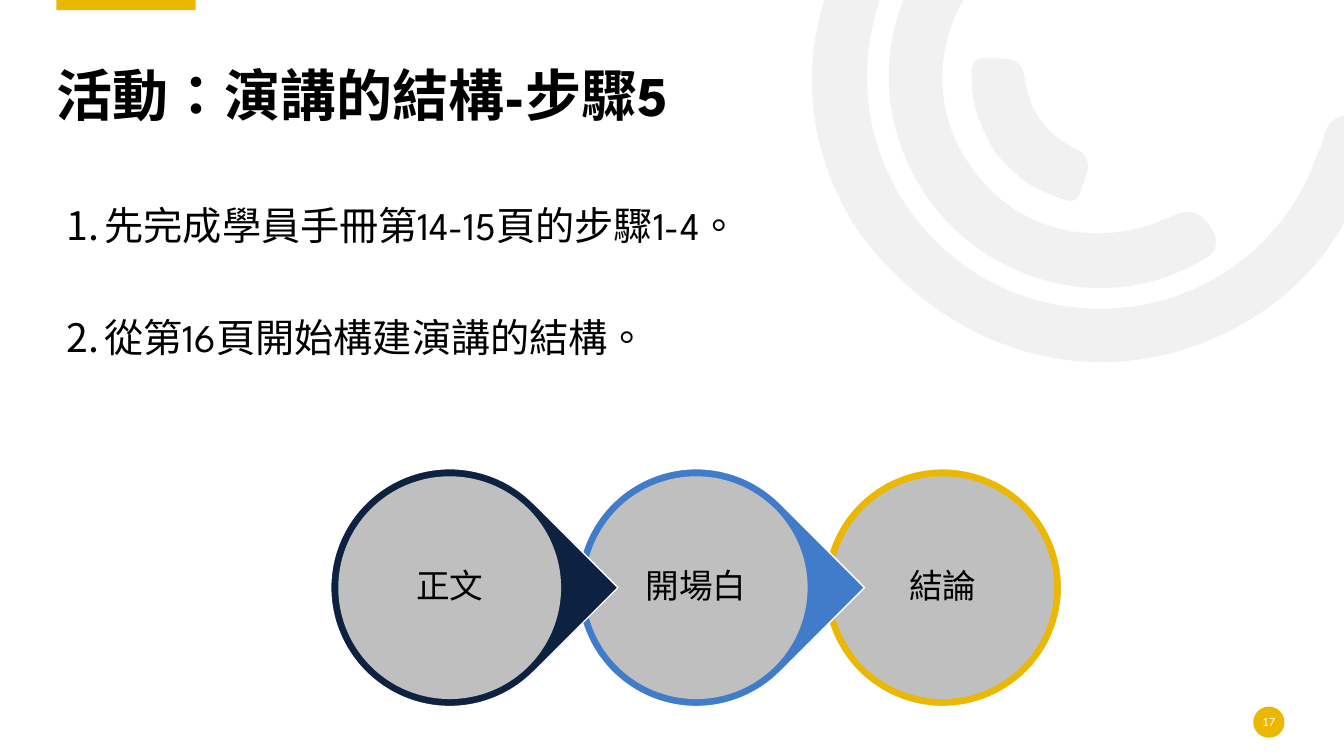
from pptx import Presentation
from pptx.dml.color import RGBColor
from pptx.enum.lang import MSO_LANGUAGE_ID
from pptx.enum.shapes import MSO_SHAPE
from pptx.enum.text import MSO_ANCHOR, PP_ALIGN
from pptx.oxml.ns import qn
from pptx.util import Inches, Pt
from lxml.etree import SubElement

GOLD, BLUE, NAVY = "EBB700", "407CCA", "0D2240"
GRAY, PALE, WHITE, BLACK = "BFBFBF", "F1F1F1", "FFFFFF", "000000"
HEAD_FONT, BODY_FONT = "League Spartan", "Calibri"

# Each arc is a start point followed by cubic curves (two handles and an end).
ARCS = [
    [(8.51, 2.29),
     (7.99, 1.49), (7.87, 0.5), (8.38, -0.5),
     (8.9, -1.52), (9.76, -2.03), (10.9, -2.07),
     (11.05, -2.07), (11.21, -2.1), (11.31, -1.95),
     (11.44, -1.75), (11.27, -1.54), (10.98, -1.54),
     (9.67, -1.54), (8.65, -0.59), (8.6, 0.68),
     (8.56, 1.81), (9.36, 2.81), (10.46, 3.02),
     (11.6, 3.24), (12.7, 2.61), (13.07, 1.52),
     (13.09, 1.48), (13.11, 1.44), (13.12, 1.4),
     (13.16, 1.19), (13.27, 1.11), (13.49, 1.17),
     (13.73, 1.24), (13.67, 1.41), (13.61, 1.56),
     (13.34, 2.45), (12.78, 3.07), (11.91, 3.41),
     (10.7, 3.87), (9.36, 3.45), (8.51, 2.29)],
    [(9.22, 1.99),
     (8.62, 1.15), (8.69, 0.07), (9.4, -0.68),
     (9.51, -0.79), (9.62, -0.95), (9.8, -0.78),
     (9.95, -0.64), (9.97, -0.5), (9.79, -0.32),
     (9.25, 0.26), (9.2, 1.08), (9.65, 1.68),
     (10.08, 2.29), (10.88, 2.49), (11.61, 2.15),
     (11.82, 2.05), (11.93, 2.12), (12.03, 2.29),
     (12.13, 2.5), (11.97, 2.56), (11.83, 2.63),
     (10.96, 3.1), (9.83, 2.82), (9.22, 1.99)],
    [(9.87, 1.51),
     (9.75, 1.3), (9.64, 1.07), (9.64, 0.82),
     (9.64, 0.73), (9.61, 0.57), (9.76, 0.58),
     (9.92, 0.59), (10.13, 0.53), (10.16, 0.76),
     (10.21, 1.1), (10.36, 1.32), (10.67, 1.48),
     (10.88, 1.57), (10.76, 1.76), (10.72, 1.89),
     (10.68, 2.06), (10.55, 1.98), (10.45, 1.94),
     (10.21, 1.87), (10.03, 1.7), (9.87, 1.51)],
]


def color(code):
    return RGBColor.from_string(code)


def paint(shape, fill, line=None):
    shape.shadow.inherit = False
    shape.fill.solid()
    shape.fill.fore_color.rgb = color(fill)
    if line:
        shape.line.color.rgb = color(line)
        shape.line.width = Pt(1)
    else:
        shape.line.fill.background()


def add_shape(slide, kind, box, fill, line=None):
    shape = slide.shapes.add_shape(kind, *map(Inches, box))
    paint(shape, fill, line)
    return shape


def add_box(slide, box):
    return slide.shapes.add_textbox(*map(Inches, box))


def number(para):
    props = para._p.get_or_add_pPr()
    props.set("marL", str(Inches(0.38)))
    props.set("indent", str(-Inches(0.38)))
    SubElement(props, qn("a:buFont"), typeface="+mj-lt")
    SubElement(props, qn("a:buAutoNum"), type="arabicPeriod")


def write(shape, *lines, font=BODY_FONT, size=24, ink=BLACK, bold=False,
          align=PP_ALIGN.LEFT, anchor=MSO_ANCHOR.MIDDLE, inset=(0, 0),
          numbered=False, gap=0):
    """Fill a shape with one paragraph per line, gap points apart."""
    frame = shape.text_frame
    frame.word_wrap = True
    frame.vertical_anchor = anchor
    frame.margin_left = frame.margin_right = Inches(inset[0])
    frame.margin_top = frame.margin_bottom = Inches(inset[1])
    for i, line in enumerate(lines):
        para = frame.add_paragraph() if i else frame.paragraphs[0]
        para.alignment = align
        para.line_spacing = 0.9
        if i:
            para.space_before = Pt(gap)
        if numbered:
            number(para)
        run = para.add_run()
        run.text = line
        for style in (para.font, run.font):
            style.name, style.size, style.bold = font, Pt(size), bold
            style.color.rgb = color(ink)
        run.font.language_id = MSO_LANGUAGE_ID.TRADITIONAL_CHINESE


def bend(shape):
    """Turn each three straight segments of an outline into one cubic curve."""
    lines = list(shape._element.iter(qn("a:lnTo")))
    for i in range(0, len(lines), 3):
        first, *rest = lines[i:i + 3]
        curve = first.makeelement(qn("a:cubicBezTo"))
        first.addprevious(curve)
        for line in (first, *rest):
            curve.append(line[0])
            line.getparent().remove(line)


def add_arc(slide, nodes):
    start, *rest = [(Inches(x), Inches(y)) for x, y in nodes]
    pen = slide.shapes.build_freeform(*start)
    pen.add_line_segments(rest, close=True)
    arc = pen.convert_to_shape()
    bend(arc)
    paint(arc, PALE)


def add_stage(slide, left, label, rim, kind):
    top, size, edge = 4.65, 2.36, 0.075
    back = add_shape(slide, kind, (left, top, size, size), rim, WHITE)
    if kind == MSO_SHAPE.TEAR:
        back.rotation = 45
    disc = size - 2 * edge
    face = add_shape(slide, MSO_SHAPE.OVAL,
                     (left + edge, top + edge, disc, disc), GRAY)
    write(face, label, align=PP_ALIGN.CENTER)


def main():
    deck = Presentation()
    deck.slide_width, deck.slide_height = Inches(13.33), Inches(7.5)
    slide = deck.slides.add_slide(deck.slide_layouts[6])

    for nodes in ARCS:
        add_arc(slide, nodes)
    add_shape(slide, MSO_SHAPE.RECTANGLE, (0.56, -0.02, 1.38, 0.12), GOLD)
    badge = add_shape(slide, MSO_SHAPE.OVAL, (12.43, 7.01, 0.31, 0.31), GOLD)
    write(badge, "17", size=9, ink=WHITE, align=PP_ALIGN.CENTER)

    write(add_box(slide, (0.56, 0.27, 12.19, 1.01)),
          "活動：演講的結構-步驟5", font=HEAD_FONT, size=40, bold=True,
          anchor=MSO_ANCHOR.BOTTOM)
    write(add_box(slide, (0.56, 2, 11.85, 2.46)),
          "先完成學員手冊第14-15頁的步驟1-4。",
          "從第16頁開始構建演講的結構。",
          font=HEAD_FONT, size=28, anchor=MSO_ANCHOR.TOP,
          inset=(0.1, 0.05), numbered=True, gap=50)

    stages = [("正文", NAVY, MSO_SHAPE.TEAR),
              ("開場白", BLUE, MSO_SHAPE.TEAR),
              ("結論", GOLD, MSO_SHAPE.OVAL)]
    for i, stage in reversed(list(enumerate(stages))):
        add_stage(slide, 3.28 + 2.445 * i, *stage)

    deck.save("out.pptx")


if __name__ == "__main__":
    main()
